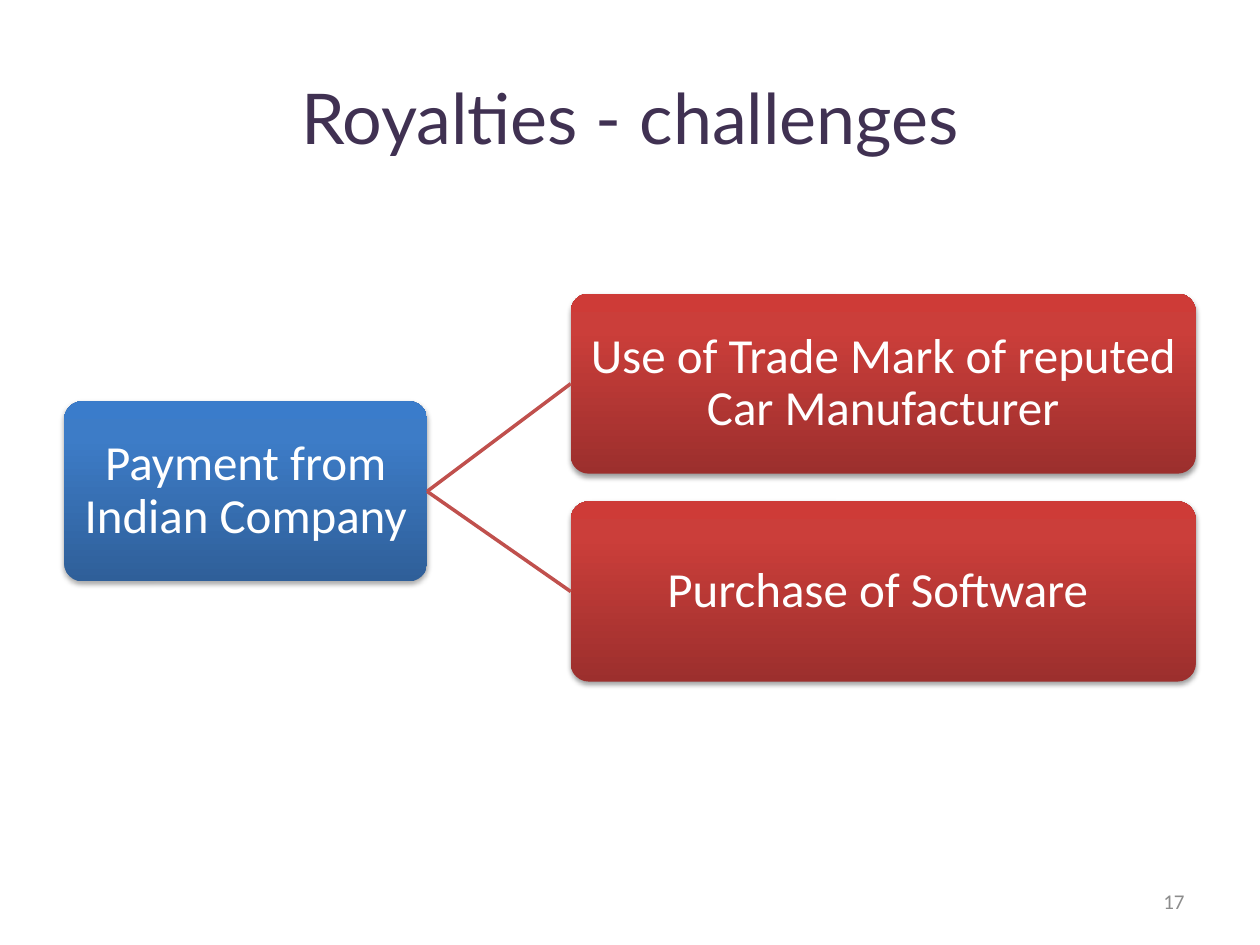
import copy

import pptx
import pptx.dml.color
import pptx.enum.shapes
import pptx.enum.text
import pptx.oxml
import pptx.oxml.ns
import pptx.oxml.xmlchemy
import pptx.util
from pptx.util import Inches

BLUE = ("2F5F99", "3D7CC7", "3A7CCB")
RED = ("9C2F2D", "CB3E3A", "CE3B37")
ALIGN = pptx.enum.text.PP_ALIGN


def rgb(color):
    """Turn a hex string into a colour."""
    return pptx.dml.color.RGBColor.from_string(color)


def write(sp, text, size, font, color, align, inset=(0.1, 0.05)):
    """Put one vertically centred paragraph into a shape."""
    tf = sp.text_frame
    tf.word_wrap = True
    tf.vertical_anchor = pptx.enum.text.MSO_ANCHOR.MIDDLE
    tf.margin_left = tf.margin_right = Inches(inset[0])
    tf.margin_top = tf.margin_bottom = Inches(inset[1])
    p = tf.paragraphs[0]
    p.alignment = align
    r = p.add_run()
    r.text = text
    r.font.size = pptx.util.Pt(size)
    r.font.name = font
    r.font.color.rgb = rgb(color)
    return p


def add_label(s, box, *style):
    """Add a text box filling the given box."""
    sp = s.shapes.add_textbox(*map(Inches, box))
    write(sp, *style)


def fill_gradient(sp, colors):
    """Fill a shape from bottom to top with three colours."""
    sp.fill.gradient()
    sp.fill.gradient_angle = 90
    stops = sp._element.spPr.find(".//" + pptx.oxml.ns.qn("a:gsLst"))
    stops.append(copy.deepcopy(stops[-1]))
    for stop, position, color in zip(sp.fill.gradient_stops, (0, 0.8, 1), colors):
        stop.position = position
        stop.color.rgb = rgb(color)


def add_shadow(sp, opacity):
    """Give a shape a soft shadow below it."""
    sp.shadow.inherit = False
    effects = sp._element.spPr.find(pptx.oxml.ns.qn("a:effectLst"))
    effects.append(pptx.oxml.parse_xml(
        f'<a:outerShdw {pptx.oxml.ns.nsdecls("a")} blurRad="{pptx.util.Pt(3.1)}" '
        f'dist="{pptx.util.Pt(1.7)}" dir="5400000" rotWithShape="0">'
        f'<a:srgbClr val="000000"><a:alpha val="{opacity * 1000}"/></a:srgbClr>'
        '</a:outerShdw>'))


def add_node(s, box, text, colors, opacity):
    """Add one rounded, shaded node of the tree."""
    sp = s.shapes.add_shape(
        pptx.enum.shapes.MSO_SHAPE.ROUNDED_RECTANGLE, *map(Inches, box))
    sp.adjustments[0] = 0.1
    fill_gradient(sp, colors)
    sp.line.fill.background()
    add_shadow(sp, opacity)
    p = write(sp, text, 28, "Calibri", "FFFFFF", ALIGN.CENTER, (0.06, 0.06))
    p.line_spacing = 0.9
    return sp


def add_branch(s, parent, child):
    """Join the right side of a parent to the left side of a child."""
    line = s.shapes.add_connector(
        pptx.enum.shapes.MSO_CONNECTOR.STRAIGHT, 0, 0, 0, 0)
    line.begin_connect(parent, 3)
    line.end_connect(child, 1)
    line.line.color.rgb = rgb("C0504D")
    line.line.width = pptx.util.Pt(2)
    line._element.spPr.append(pptx.oxml.xmlchemy.OxmlElement("a:effectLst"))


def add_tree(s, box, root, children):
    """Add a root on the left with its children stacked on the right."""
    left, top, width, height = box
    node_h, root_w, child_w = 1.43, 2.88, 4.96
    step = (height - node_h) / (len(children) - 1)
    root_top = top + (height - node_h) / 2 + 0.03
    parent = add_node(s, (left, root_top, root_w, node_h), root, BLUE, 35)
    for i, text in enumerate(children):
        child_box = (left + width - child_w, top + i * step, child_w, node_h)
        add_branch(s, parent, add_node(s, child_box, text, RED, 38))


def main():
    """Build and save the slide."""
    prs = pptx.Presentation()
    prs.slide_width, prs.slide_height = Inches(10), Inches(7.5)
    s = prs.slides.add_slide(prs.slide_layouts[6])
    add_label(s, (0.5, 0.3, 9, 1.25), "Royalties - challenges",
              40, "Lato", "403152", ALIGN.CENTER)
    add_tree(s, (0.51, 2.33, 8.98, 3.08), "Payment from Indian Company",
             ("Use of Trade Mark of reputed Car Manufacturer",
              "Purchase of Software "))
    add_label(s, (7.17, 6.95, 2.33, 0.4), "17",
              12, "Calibri", "8C8C8C", ALIGN.RIGHT)
    prs.save("out.pptx")


if __name__ == "__main__":
    main()
